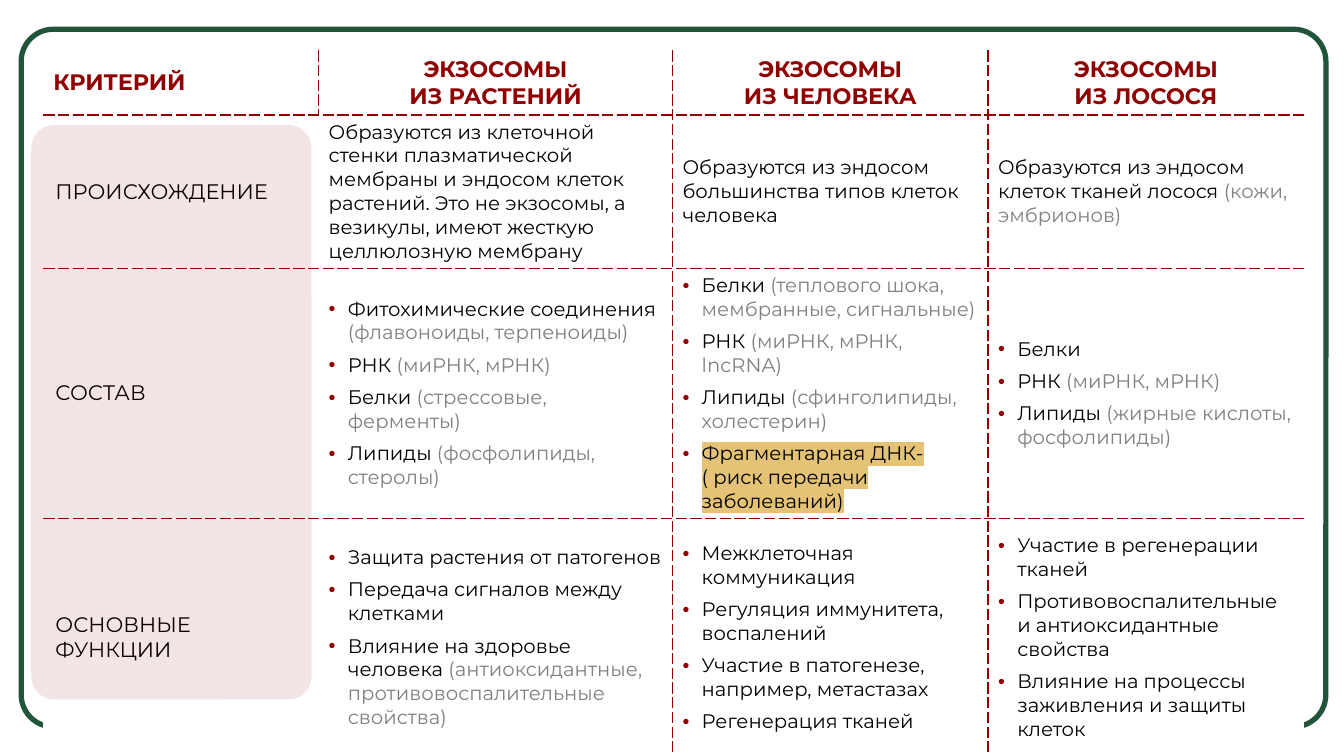
from copy import deepcopy
from dataclasses import dataclass

from lxml import etree
from pptx import Presentation
from pptx.dml.color import RGBColor
from pptx.enum.shapes import MSO_SHAPE
from pptx.enum.text import MSO_ANCHOR, PP_ALIGN
from pptx.oxml.ns import qn
from pptx.util import Inches, Pt

ROUNDED = MSO_SHAPE.ROUNDED_RECTANGLE
MIDDLE = MSO_ANCHOR.MIDDLE
CENTER = PP_ALIGN.CENTER
LEFT = PP_ALIGN.LEFT
FONT = "Montserrat"
RED, GREEN, BLACK, GRAY, WHITE, GOLD = "900000", "21553A", "000000", "808080", "FFFFFF", "E4C276"
COLUMN_WIDTHS = [2.73, 3.51, 3.13, 3.13]
ROW_HEIGHTS = [0.64, 1.12, 2.19, 2.37]


@dataclass
class Entry:
    main: str
    note: str = ""
    highlight: str = ""
    space_after: int = 0


@dataclass
class Style:
    size: int
    color: str = BLACK
    bold: bool = False
    bullet: bool = False
    align: PP_ALIGN = LEFT


HEADER = Style(16, RED, bold=True)
HEADER_CENTERED = Style(16, RED, bold=True, align=CENTER)
CRITERION = Style(15)
PLAIN = Style(14)
BULLETED = Style(14, bullet=True)

HEADERS = [
    [Entry("КРИТЕРИЙ")],
    [Entry("ЭКЗОСОМЫ\nИЗ РАСТЕНИЙ")],
    [Entry("ЭКЗОСОМЫ\nИЗ ЧЕЛОВЕКА")],
    [Entry("ЭКЗОСОМЫ\nИЗ ЛОСОСЯ")],
]
ORIGIN = [
    [Entry("ПРОИСХОЖДЕНИЕ")],
    [Entry("Образуются из клеточной стенки плазматической мембраны и эндосом клеток растений. "
           "Это не экзосомы, а везикулы, имеют жесткую целлюлозную мембрану")],
    [Entry("Образуются из эндосом большинства типов клеток человека")],
    [Entry("Образуются из эндосом клеток тканей лосося ", "(кожи, эмбрионов)")],
]
COMPOSITION = [
    [Entry("СОСТАВ")],
    [
        Entry("Фитохимические соединения ", "(флавоноиды, терпеноиды)"),
        Entry("РНК ", "(миРНК, мРНК)"),
        Entry("Белки ", "(стрессовые, ферменты)"),
        Entry("Липиды ", "(фосфолипиды, стеролы)"),
    ],
    [
        Entry("Белки ", "(теплового шока, мембранные, сигнальные)"),
        Entry("РНК ", "(миРНК, мРНК, lncRNA)"),
        Entry("Липиды ", "(сфинголипиды, холестерин)"),
        Entry("Фрагментарная ДНК- ( риск передачи заболеваний)", highlight=GOLD),
    ],
    [
        Entry("Белки"),
        Entry("РНК ", "(миРНК, мРНК)"),
        Entry("Липиды ", "(жирные кислоты, фосфолипиды)"),
    ],
]
FUNCTIONS = [
    [Entry("ОСНОВНЫЕ\nФУНКЦИИ")],
    [
        Entry("Защита растения от патогенов"),
        Entry("Передача сигналов между клетками"),
        Entry("Влияние на здоровье человека ", "(антиоксидантные, противовоспалительные свойства)"),
    ],
    [
        Entry("Межклеточная коммуникация"),
        Entry("Регуляция иммунитета, воспалений"),
        Entry("Участие в патогенезе, например, метастазах"),
        Entry("Регенерация тканей"),
    ],
    [
        Entry("Участие в регенерации тканей"),
        Entry("Противовоспалительные\nи антиоксидантные свойства"),
        Entry("Влияние на процессы заживления и защиты клеток", space_after=6),
    ],
]
ROWS = [HEADERS, ORIGIN, COMPOSITION, FUNCTIONS]


def rgb(value: str) -> RGBColor:
    return RGBColor.from_string(value)


def add_node(parent, tag: str, **attributes: str):
    return etree.SubElement(parent, qn(tag), attributes)


def add_panel(page, left: float, top: float, width: float, height: float, corner: float, fill: str):
    panel = page.shapes.add_shape(ROUNDED, Inches(left), Inches(top), Inches(width), Inches(height))
    panel.shadow.inherit = False
    panel.adjustments[0] = corner
    panel.fill.solid()
    panel.fill.fore_color.rgb = rgb(fill)
    panel.line.fill.background()
    return panel


def add_span(para, text: str, style: Style, color: str, highlight: str = "") -> None:
    for index, line in enumerate(text.split("\n")):
        if index:
            para.add_line_break()
            para._p.findall(qn("a:br"))[-1].append(deepcopy(span._r.rPr))
        span = para.add_run()
        span.text = line
        span.font.size = Pt(style.size)
        span.font.bold = style.bold
        span.font.color.rgb = rgb(color)
        if highlight:
            mark = add_node(span._r.rPr, "a:highlight")
            add_node(mark, "a:srgbClr", val=highlight)
        span.font.name = FONT


def add_bullet(para) -> None:
    properties = para._p.get_or_add_pPr()
    properties.set("marL", str(Inches(0.19)))
    properties.set("indent", str(-Inches(0.19)))
    add_node(add_node(properties, "a:buClr"), "a:srgbClr", val=RED)
    add_node(properties, "a:buFont", typeface="Arial")
    add_node(properties, "a:buChar", char="•")


def fill_cell(cell, entries: list[Entry], style: Style) -> None:
    for index, entry in enumerate(entries):
        para = cell.text_frame.add_paragraph() if index else cell.text_frame.paragraphs[0]
        para.alignment = style.align
        para.space_before = Pt(6 if index else 0)
        para.space_after = Pt(entry.space_after)
        if style.bullet:
            add_bullet(para)
        add_span(para, entry.main, style, style.color, entry.highlight)
        if entry.note:
            add_span(para, entry.note, style, GRAY)


def draw_borders(cell, row: int, column: int) -> None:
    header = row == 0
    sides = {
        "a:lnL": column > 1 or (header and column == 1),
        "a:lnR": 0 < column < 3 or (header and column == 0),
        "a:lnT": row > 0,
        "a:lnB": row < 3,
    }
    properties = cell._tc.get_or_add_tcPr()
    for tag, visible in sides.items():
        border = add_node(properties, tag, w=str(Pt(1)))
        if visible:
            add_node(add_node(border, "a:solidFill"), "a:srgbClr", val=RED)
            add_node(border, "a:prstDash", val="sysDash")
        else:
            add_node(border, "a:noFill")


def choose_style(row: int, column: int) -> Style:
    if row == 0:
        return HEADER_CENTERED if column else HEADER
    if column == 0:
        return CRITERION
    return PLAIN if row == 1 else BULLETED


def add_comparison(page) -> None:
    frame = page.shapes.add_table(4, 4, Inches(0.43), Inches(0.5), Inches(12.5), Inches(6.32))
    table = frame.table
    table.first_row = False
    table.horz_banding = False
    for column, width in enumerate(COLUMN_WIDTHS):
        table.columns[column].width = Inches(width)
    for row, height in enumerate(ROW_HEIGHTS):
        table.rows[row].height = Inches(height)
        for column, entries in enumerate(ROWS[row]):
            cell = table.cell(row, column)
            cell.vertical_anchor = MIDDLE
            draw_borders(cell, row, column)
            if row:
                cell.fill.solid()
                cell.fill.fore_color.rgb = rgb(WHITE)
                if column == 0:
                    cell.margin_left = Inches(0.12)
            else:
                cell.fill.background()
            fill_cell(cell, entries, choose_style(row, column))


def main() -> None:
    deck = Presentation()
    deck.slide_width, deck.slide_height = Inches(13.33), Inches(7.5)
    page = deck.slides.add_slide(deck.slide_layouts[6])
    outline = add_panel(page, 3.22, -2.72, 6.92, 12.94, 0.046, WHITE)
    outline.rotation = 90
    outline.line.color.rgb = rgb(GREEN)
    outline.line.width = Pt(3.75)
    add_comparison(page)
    tint = add_panel(page, 0.31, 1.24, 2.78, 5.7, 0.083, RED)
    color = tint._element.spPr.find(qn("a:solidFill")).find(qn("a:srgbClr"))
    add_node(color, "a:alpha", val="10000")
    deck.save("out.pptx")


if __name__ == "__main__":
    main()
